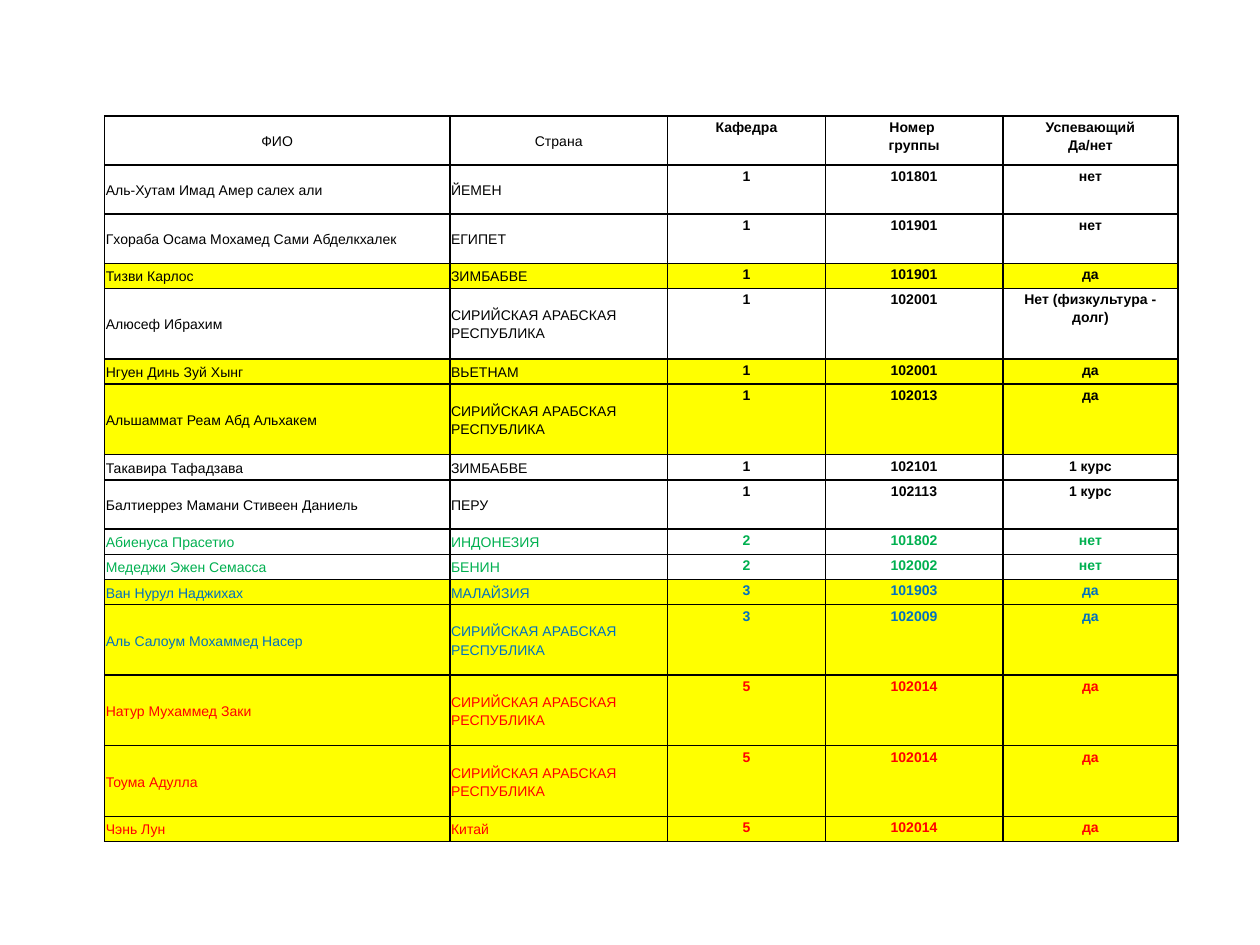
from typing import NamedTuple

from lxml.etree import SubElement
from pptx import Presentation
from pptx.dml.color import RGBColor
from pptx.enum.text import MSO_ANCHOR as Anchor, PP_ALIGN as Align
from pptx.oxml.ns import qn
from pptx.util import Inches, Pt


class Student(NamedTuple):
    name: str
    country: str
    department: str
    group: str
    passing: str
    height: float


SHORT, MEDIUM, TALL = 0.2, 0.39, 0.56
BLACK, YELLOW = "000000", "FFFF00"
SYRIA = "СИРИЙСКАЯ АРАБСКАЯ РЕСПУБЛИКА"
DEPARTMENT_COLORS = {"2": "00B050", "3": "0070C0", "5": "FF0000"}
COLUMN_WIDTHS = (2.74, 1.73, 1.25, 1.41, 1.39)
TEXT_COLUMNS = 2
MARGIN = Inches(0.01)
CELL_FORMAT = {
    "margin_left": MARGIN,
    "margin_right": MARGIN,
    "margin_top": MARGIN,
    "margin_bottom": MARGIN,
}
FONT_FORMAT = {"name": "Arial", "size": Pt(8)}

HEADER = Student("ФИО", "Страна", "Кафедра", "Номер \nгруппы", "Успевающий\nДа/нет", MEDIUM)
STUDENTS = (
    Student("Аль-Хутам Имад Амер салех али", "ЙЕМЕН", "1", "101801", "нет", MEDIUM),
    Student("Гхораба Осама Мохамед Сами Абделкхалек", "ЕГИПЕТ", "1", "101901", "нет", MEDIUM),
    Student("Тизви Карлос", "ЗИМБАБВЕ", "1", "101901", "да", SHORT),
    Student("Алюсеф Ибрахим", SYRIA, "1", "102001", "Нет (физкультура - долг)", TALL),
    Student("Нгуен Динь Зуй Хынг", "ВЬЕТНАМ", "1", "102001", "да", SHORT),
    Student("Альшаммат Реам Абд Альхакем", SYRIA, "1", "102013", "да", TALL),
    Student("Такавира Тафадзава", "ЗИМБАБВЕ", "1", "102101", "1 курс", SHORT),
    Student("Балтиеррез Мамани Стивеен Даниель", "ПЕРУ", "1", "102113", "1 курс", MEDIUM),
    Student("Абиенуса Прасетио", "ИНДОНЕЗИЯ", "2", "101802", "нет", SHORT),
    Student("Медеджи Эжен Семасса", "БЕНИН", "2", "102002", "нет", SHORT),
    Student("Ван Нурул Наджихах", "МАЛАЙЗИЯ", "3", "101903", "да", SHORT),
    Student("Аль Салоум Мохаммед Насер", SYRIA, "3", "102009", "да", TALL),
    Student("Натур Мухаммед Заки", SYRIA, "5", "102014", "да", TALL),
    Student("Тоума Адулла", SYRIA, "5", "102014", "да", TALL),
    Student("Чэнь Лун", "Китай", "5", "102014", "да", SHORT),
)


def set_color(color_format, value: str) -> None:
    color_format.rgb = RGBColor.from_string(value)


def apply_format(target, values: dict) -> None:
    for attribute, value in values.items():
        setattr(target, attribute, value)


def add_borders(cell) -> None:
    properties = cell._tc.get_or_add_tcPr()
    for side in ("lnL", "lnR", "lnT", "lnB"):
        line = SubElement(properties, qn(f"a:{side}"), w=str(Pt(1)))
        fill = SubElement(line, qn("a:solidFill"))
        SubElement(fill, qn("a:srgbClr"), val=BLACK)


def write_cell(cell, text: str, color: str, bold: bool, align: Align) -> None:
    apply_format(cell, CELL_FORMAT)
    cell.vertical_anchor = Anchor.TOP if bold else Anchor.MIDDLE
    cell.text = text
    for paragraph in cell.text_frame.paragraphs:
        apply_format(paragraph, {"alignment": align, "line_spacing": 1.15})
        for run in paragraph.runs:
            apply_format(run.font, FONT_FORMAT | {"bold": bold})
            set_color(run.font.color, color)


def fill_row(table, row: int, student: Student) -> None:
    table.rows[row].height = Inches(student.height)
    color = DEPARTMENT_COLORS.get(student.department, BLACK)
    for column, text in enumerate(student[:-1]):
        cell = table.cell(row, column)
        bold = column >= TEXT_COLUMNS
        align = Align.CENTER if bold or student is HEADER else Align.LEFT
        write_cell(cell, text, color, bold, align)
        add_borders(cell)
        if student.passing == "да":
            cell.fill.solid()
            set_color(cell.fill.fore_color, YELLOW)
        else:
            cell.fill.background()


def add_student_table(slide) -> None:
    records = (HEADER, *STUDENTS)
    height = sum(student.height for student in records)
    frame = slide.shapes.add_table(
        len(records), len(COLUMN_WIDTHS),
        Inches(0.83), Inches(0.92), Inches(sum(COLUMN_WIDTHS)), Inches(height),
    )
    table = frame.table
    apply_format(table, {"first_row": False, "horz_banding": False})
    for column, width in zip(table.columns, COLUMN_WIDTHS):
        column.width = Inches(width)
    for row, student in enumerate(records):
        fill_row(table, row, student)


def main() -> None:
    """Build the slide listing foreign students and their progress."""
    presentation = Presentation()
    presentation.slide_width = Inches(10)
    presentation.slide_height = Inches(7.5)
    slide = presentation.slides.add_slide(presentation.slide_layouts[6])
    add_student_table(slide)
    presentation.save("out.pptx")


if __name__ == "__main__":
    main()
